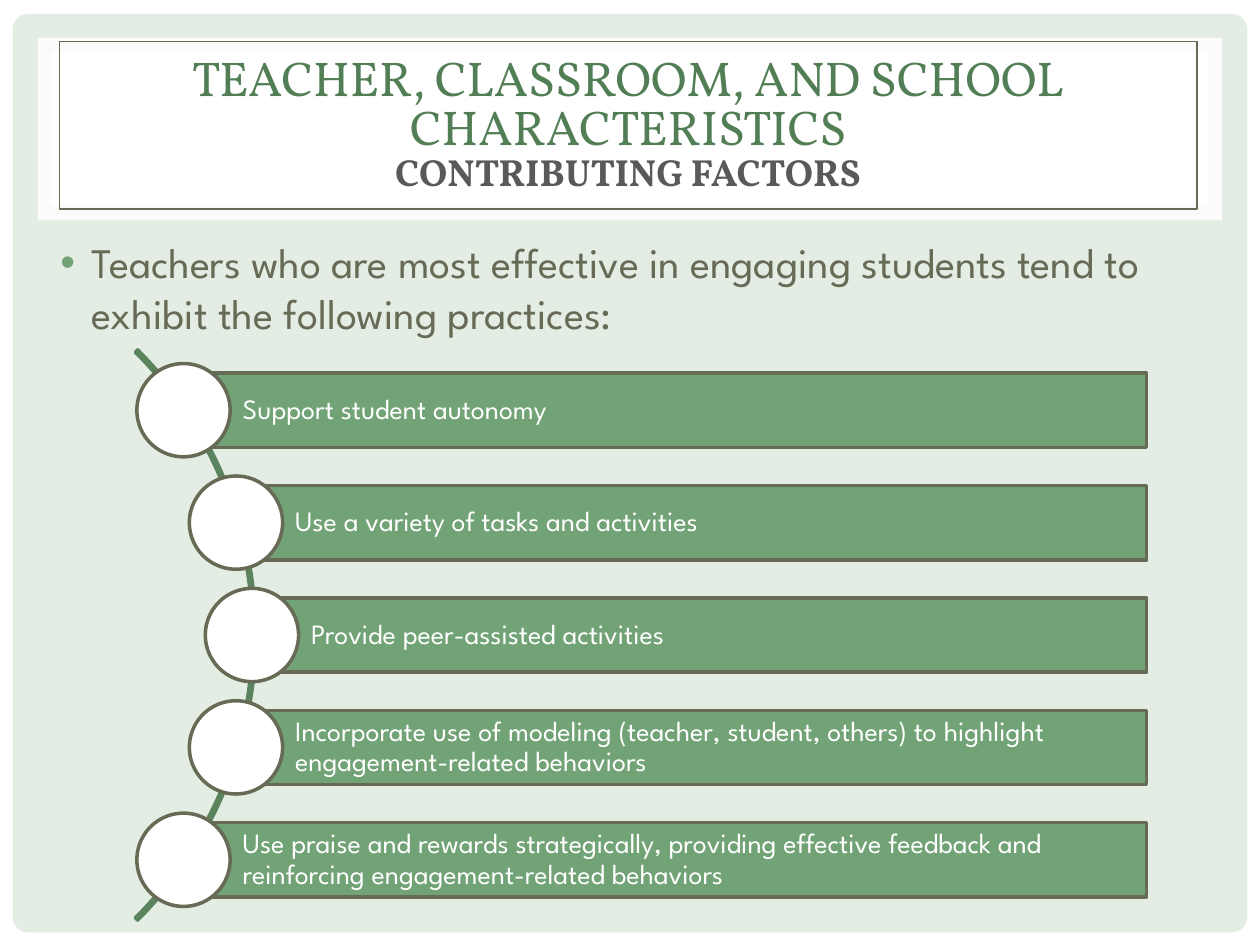
import math
import pptx
import pptx.util
import pptx.dml.color
import pptx.enum.shapes
import pptx.enum.text
import pptx.oxml.ns
import lxml.etree

Pt = pptx.util.Pt
Kind = pptx.enum.shapes.MSO_SHAPE
Align = pptx.enum.text.PP_ALIGN
Anchor = pptx.enum.text.MSO_ANCHOR
qn = pptx.oxml.ns.qn

COLS, ROWS = 100, 75


def color(text):
    return pptx.dml.color.RGBColor.from_string(text)


class Deck:
    pale, white, green, olive = "E3EDE4", "FFFFFF", "72A376", "676A55"
    dark, gray, arc = "527E56", "595959", "5B835E"
    sans, serif = "League Spartan", "Vollkorn"

    def __init__(self):
        self.file = pptx.Presentation()
        self.file.slide_width = pptx.util.Inches(10)
        self.file.slide_height = pptx.util.Inches(7.5)
        self.slide = self.file.slides.add_slide(self.file.slide_layouts[6])
        back = self.slide.background.fill
        back.solid()
        back.fore_color.rgb = color(self.pale)

    def grid(self, col, row, wide, high):
        x = self.file.slide_width / COLS
        y = self.file.slide_height / ROWS
        return [round(n) for n in (col * x, row * y, wide * x, high * y)]

    def shape(self, kind, box, fill=None, line=None, width=2, turns=(), alpha=None):
        item = self.slide.shapes.add_shape(kind, *self.grid(*box))
        item.shadow.inherit = False
        for i, turn in enumerate(turns):
            item.adjustments[i] = turn
        if fill:
            item.fill.solid()
            item.fill.fore_color.rgb = color(fill)
        else:
            item.fill.background()
        if alpha:
            tone = item.fill._xPr.find(".//" + qn("a:srgbClr"))
            lxml.etree.SubElement(tone, qn("a:alpha"), val=str(alpha * 1000))
        if line:
            item.line.color.rgb = color(line)
            item.line.width = Pt(width)
        else:
            item.line.fill.background()
        return item

    def frame(self, item, anchor, pad=(1, 0.5, 1, 0.5)):
        frame = item.text_frame
        frame.word_wrap = True
        frame.vertical_anchor = anchor
        left, top, right, base = pad
        frame.margin_left, frame.margin_top, frame.margin_right, frame.margin_bottom = self.grid(left, top, right, base)
        return frame.paragraphs[0]

    def run(self, para, text, size, tint, face, bold=False):
        run = para.add_run()
        run.text = text
        run.font.size = Pt(size)
        run.font.name = face
        run.font.bold = bold
        run.font.color.rgb = color(tint)

    def title(self, box, head, sub):
        item = self.shape(Kind.RECTANGLE, box, line=self.olive, width=0.75)
        para = self.frame(item, Anchor.MIDDLE)
        para.alignment = Align.CENTER
        para.line_spacing = 0.85
        self.run(para, head, 27.9, self.dark, self.serif)
        para.add_line_break()
        self.run(para, sub, 21.6, self.gray, self.serif, True)

    def bullet(self, box, text):
        item = self.slide.shapes.add_textbox(*self.grid(*box))
        para = self.frame(item, Anchor.TOP)
        para.space_before = Pt(4.8)
        props = para._p.get_or_add_pPr()
        props.set("marL", str(pptx.util.Inches(0.38)))
        props.set("indent", str(pptx.util.Inches(-0.25)))
        tint = lxml.etree.SubElement(props, qn("a:buClr"))
        lxml.etree.SubElement(tint, qn("a:srgbClr"), val=self.green)
        lxml.etree.SubElement(props, qn("a:buFont"), typeface="Arial")
        lxml.etree.SubElement(props, qn("a:buChar"), char="•")
        self.run(para, text, 24, self.olive, self.sans)

    def step(self, x, y, text):
        high, right, size = 5.9, 91, 7.4
        bar = self.shape(Kind.RECTANGLE, (x, y - high / 2, right - x, high), self.green, self.olive)
        para = self.frame(bar, Anchor.MIDDLE, (4.7, 0.4, 0.4, 0.4))
        para.alignment = Align.LEFT
        para.line_spacing = 0.9
        para.space_after = Pt(5.6)
        self.run(para, text, 16, self.white, self.sans)
        self.shape(Kind.OVAL, (x - size / 2, y - size / 2, size, size), self.white, self.olive)

    def steps(self, texts):
        x, y, ray, gap = -11.7, 50.4, 32, 8.92
        self.shape(Kind.BLOCK_ARC, (x - ray, y - ray, 2 * ray, 2 * ray),
                   line=self.arc, turns=(189, 27, 0.004))
        for i, text in enumerate(texts):
            drop = (i - (len(texts) - 1) / 2) * gap
            self.step(x - 0.3 + math.sqrt(ray ** 2 - drop ** 2), y + drop, text)


def main():
    deck = Deck()
    deck.shape(Kind.RECTANGLE, (0, 0, COLS, ROWS), deck.white)
    deck.shape(Kind.ROUNDED_RECTANGLE, (1, 1.1, 98, 72.9), deck.pale, turns=(0.017,))
    deck.shape(Kind.RECTANGLE, (3, 3, 94, 14.5), deck.white, alpha=83)
    deck.shape(Kind.RECTANGLE, (4.1, 4.1, 91.7, 12.2), deck.white)
    deck.bullet((2.5, 18.3, 94.2, 54.2),
                "Teachers who are most effective in engaging students tend to exhibit the following practices:")
    deck.title((4.7, 3.3, 90.3, 13.3),
               "TEACHER, CLASSROOM, AND SCHOOL CHARACTERISTICS", "CONTRIBUTING FACTORS")
    deck.steps([
        "Support student autonomy",
        "Use a variety of tasks and activities",
        "Provide peer-assisted activities",
        "Incorporate use of modeling (teacher, student, others) to highlight engagement-related behaviors",
        "Use praise and rewards strategically, providing effective feedback and reinforcing engagement-related behaviors",
    ])
    deck.file.save("out.pptx")


if __name__ == "__main__":
    main()
